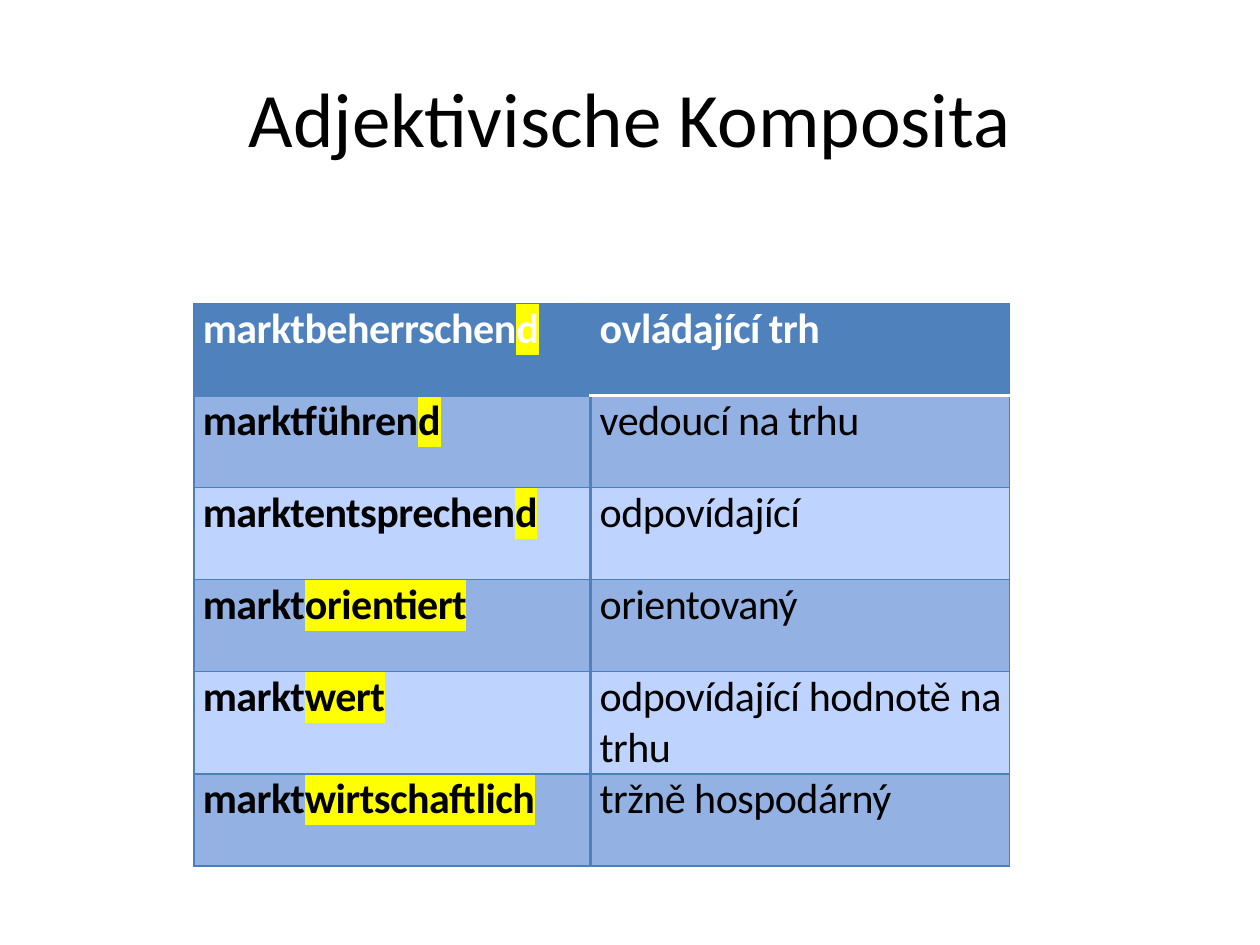
from dataclasses import dataclass

from lxml import etree
from pptx import Presentation
from pptx import util as u
from pptx.dml.color import RGBColor
from pptx.enum import text
from pptx.oxml.ns import qn

COLORS = {
    "text": "000000",
    "header_text": "FFFFFF",
    "highlight": "FFFF00",
    "header": "4F81BD",
    "band_dark": "93B1E3",
    "band_light": "BFD3FF",
    "line": "4B7EBC",
    "divider": "4F81BD",
    "header_rule": "FFFFFF",
}
FONT = "Calibri"
ROW_HEIGHT = 0.73
COLUMN_WIDTHS = (3.15, 3.32)


@dataclass(frozen=True)
class Compound:
    stem: str
    ending: str
    czech: str


COMPOUNDS = (
    Compound("marktbeherrschen", "d", "ovládající trh"),
    Compound("marktführen", "d", "vedoucí na trhu"),
    Compound("marktentsprechen", "d", "odpovídající"),
    Compound("markt", "orientiert", "orientovaný"),
    Compound("markt", "wert", "odpovídající hodnotě na trhu"),
    Compound("markt", "wirtschaftlich", "tržně hospodárný"),
)


def set_attributes(obj, values: dict) -> None:
    for name, value in values.items():
        setattr(obj, name, value)


def add_run(p, content: str, size: int, color: str, bold: bool = False,
            highlighted: bool = False) -> None:
    r = p.add_run()
    r.text = content
    set_attributes(r.font, {"size": u.Pt(size), "bold": bold, "name": FONT})
    r.font.color.rgb = RGBColor.from_string(COLORS[color])
    if highlighted:
        mark = etree.Element(qn("a:highlight"))
        etree.SubElement(mark, qn("a:srgbClr"), val=COLORS["highlight"])
        r.font.fill._xPr.find(qn("a:solidFill")).addnext(mark)


def add_border(cell, side: str, color: str, width: float) -> None:
    ln = etree.SubElement(cell._tc.get_or_add_tcPr(), qn(f"a:ln{side}"),
                          w=str(u.Pt(width)))
    fill = etree.SubElement(ln, qn("a:solidFill"))
    etree.SubElement(fill, qn("a:srgbClr"), val=COLORS[color])


def format_cell(cell, row: int, col: int) -> None:
    thin, thick = ("line", 0.75), ("divider", 2)
    rule = ("header_rule" if col else "header", 2)
    borders = {
        "L": thick if col else thin,
        "R": thin if col else thick,
        "T": rule if row == 1 else thin,
        "B": rule if row == 0 else thin,
    }
    for side, (color, width) in borders.items():
        add_border(cell, side, color, width)
    band = "header" if row == 0 else "band_dark" if row % 2 else "band_light"
    cell.fill.solid()
    cell.fill.fore_color.rgb = RGBColor.from_string(COLORS[band])
    set_attributes(cell, {
        "margin_left": u.Inches(0.07), "margin_right": u.Inches(0.07),
        "margin_top": 0, "margin_bottom": 0,
    })


def add_title(s, content: str) -> None:
    title = s.shapes.title
    set_attributes(title, {
        "left": u.Inches(0.5), "top": u.Inches(0.3),
        "width": u.Inches(9), "height": u.Inches(1.25),
    })
    tf = title.text_frame
    tf.vertical_anchor = text.MSO_ANCHOR.MIDDLE
    p = tf.paragraphs[0]
    p.alignment = text.PP_ALIGN.CENTER
    add_run(p, content, 44, "text")


def add_compound_table(s, compounds: tuple[Compound, ...]) -> None:
    table = s.shapes.add_table(
        len(compounds), len(COLUMN_WIDTHS), u.Inches(1.54), u.Inches(2.41),
        u.Inches(sum(COLUMN_WIDTHS)), u.Inches(ROW_HEIGHT * len(compounds))).table
    for column, width in zip(table.columns, COLUMN_WIDTHS):
        column.width = u.Inches(width)
    for i, compound in enumerate(compounds):
        table.rows[i].height = u.Inches(ROW_HEIGHT)
        color = "text" if i else "header_text"
        columns = (
            ((compound.stem, True, False), (compound.ending, True, True)),
            ((compound.czech, i == 0, False),),
        )
        for j, runs in enumerate(columns):
            cell = table.cell(i, j)
            format_cell(cell, i, j)
            p = cell.text_frame.paragraphs[0]
            p.alignment = text.PP_ALIGN.JUSTIFY
            for content, bold, highlighted in runs:
                add_run(p, content, 24, color, bold, highlighted)
            for r in p.runs:
                r.font._element.set("spc", "-30")


def main() -> None:
    prs = Presentation()
    set_attributes(prs, {"slide_width": u.Inches(10), "slide_height": u.Inches(7.5)})
    s = prs.slides.add_slide(prs.slide_layouts[5])
    add_title(s, "Adjektivische Komposita")
    add_compound_table(s, COMPOUNDS)
    prs.save("out.pptx")


if __name__ == "__main__":
    main()
